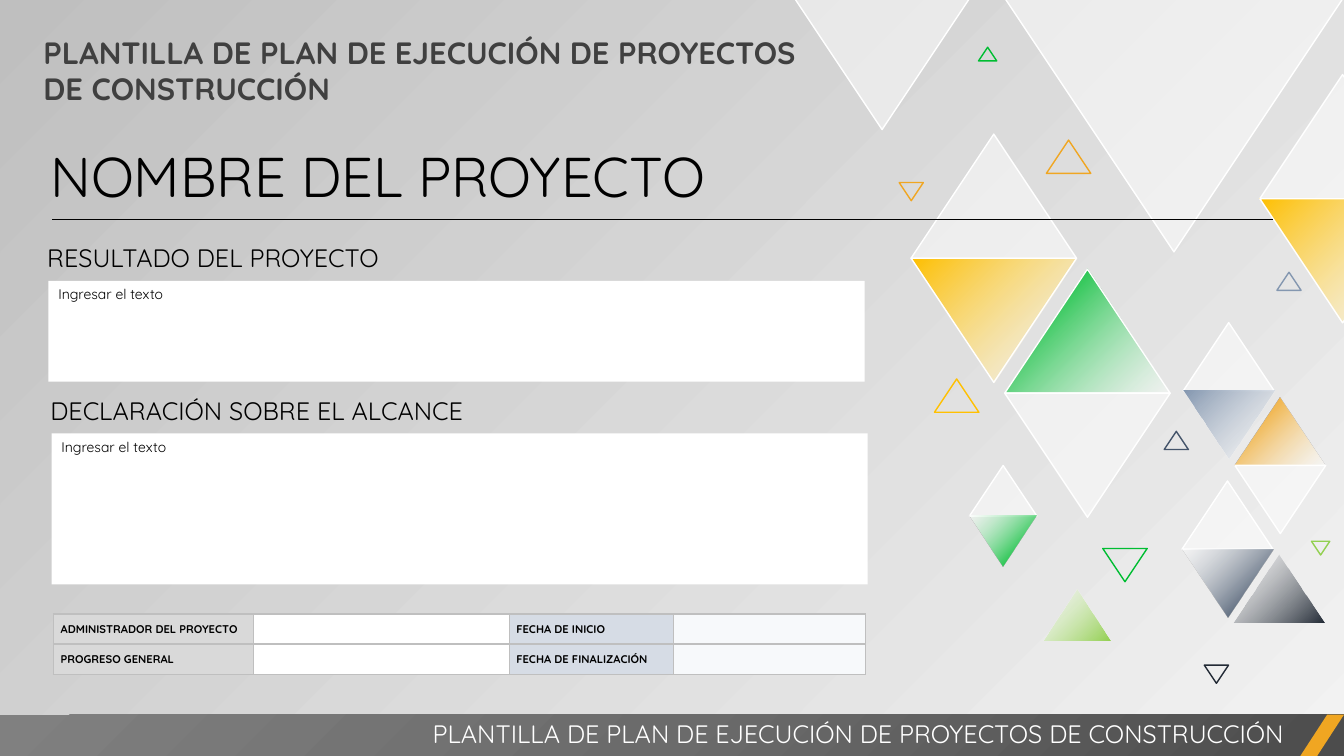
from pptx import Presentation
from pptx.dml.color import RGBColor
from pptx.enum.shapes import MSO_CONNECTOR as Connector, MSO_SHAPE as Shape
from pptx.enum.text import MSO_ANCHOR as Anchor, MSO_AUTO_SIZE as AutoSize, PP_ALIGN as Align
from pptx.oxml import parse_xml
from pptx.oxml.ns import nsdecls, qn
from pptx.util import Cm, Pt

BLACK = RGBColor(0x00, 0x00, 0x00)
WHITE = RGBColor(0xFF, 0xFF, 0xFF)
CHARCOAL = RGBColor(0x40, 0x40, 0x40)
PALE = RGBColor(0xF2, 0xF2, 0xF2)
SILVER = RGBColor(0xBF, 0xBF, 0xBF)
LABEL_GREY = RGBColor(0xD9, 0xD9, 0xD9)
LABEL_BLUE = RGBColor(0xD6, 0xDC, 0xE5)
VALUE_BLUE = RGBColor(0xF7, 0xF9, 0xFB)
BAR_DARK = RGBColor(0x4C, 0x4C, 0x4C)
BAR_MIDDLE = RGBColor(0x6B, 0x6B, 0x6B)
BAR_LIGHT = RGBColor(0x80, 0x80, 0x80)
YELLOW = RGBColor(0xFF, 0xC0, 0x00)
GREEN = RGBColor(0x00, 0xBD, 0x32)
ORANGE = RGBColor(0xF0, 0xA6, 0x22)
LIME = RGBColor(0x92, 0xD0, 0x50)
BLUE = RGBColor(0x84, 0x97, 0xB0)
SLATE = RGBColor(0x44, 0x54, 0x6A)
NAVY = RGBColor(0x22, 0x2A, 0x35)

FONT = "Quicksand"
HEADING = "PLANTILLA DE PLAN DE EJECUCIÓN DE PROYECTOS DE CONSTRUCCIÓN"
PROMPT = "Ingresar el texto"
DIAGONAL = '<a:lin ang="13500000" scaled="0"/>'
CORNER = '<a:path path="circle"><a:fillToRect l="100000" t="100000"/></a:path>'

# Gradient stops: position, colour, opacity (percent)
FADE_OUT = {color: [(0, color, 100), (100, WHITE, 50)] for color in (YELLOW, NAVY, BLUE, LIME)}
FADE_IN = {color: [(0, WHITE, 50), (82, color, 100)] for color in (GREEN, SLATE, ORANGE)}
TRIANGLE_STOPS = {**FADE_OUT, **FADE_IN, WHITE: [(0, WHITE, 50), (100, WHITE, 50)]}

# Diamonds: left, top, width, upper colour, lower colour
DIAMONDS = [
    (22.96, 3.38, 4.17, WHITE, YELLOW),
    (25.32, 6.78, 4.17, GREEN, WHITE),
    (29.79, 12.12, 2.29, WHITE, SLATE),
    (29.82, 8.13, 2.29, WHITE, BLUE),
    (31.12, 10.01, 2.29, ORANGE, WHITE),
    (24.43, 11.73, 1.7, WHITE, GREEN),
    (31.75, 1.88, 4.17, WHITE, YELLOW),
]
# Single triangles: left, top, width, colour, pointing down
SINGLES = [
    (25.32, -0.05, 8.53, WHITE, True),
    (20.02, -0.05, 4.42, WHITE, True),
    (31.09, 13.97, 2.29, NAVY, False),
    (26.29, 14.86, 1.7, LIME, False),
]
OUTLINES = [
    (27.79, 13.82, 1.12, GREEN, True),
    (23.55, 9.55, 1.12, YELLOW, False),
    (29.34, 10.87, 0.61, SLATE, False),
    (30.35, 16.76, 0.61, NAVY, True),
    (22.66, 4.6, 0.61, ORANGE, True),
    (32.18, 6.86, 0.61, BLUE, False),
    (24.66, 1.19, 0.46, GREEN, False),
    (33.05, 13.64, 0.46, LIME, True),
    (26.37, 3.53, 1.12, ORANGE, False),
]


def set_all(target, values):
    for name, value in values.items():
        setattr(target, name, value)


def lengths(box):
    return [Cm(value) for value in box]


def paint_gradient(fill, holder, stops, direction=DIAGONAL):
    fill.background()
    marks = "".join(
        f'<a:gs pos="{position * 1000}"><a:srgbClr val="{color}">'
        f'<a:alpha val="{opacity * 1000}"/></a:srgbClr></a:gs>'
        for position, color, opacity in stops)
    gradient = parse_xml(f'<a:gradFill {nsdecls("a")} rotWithShape="1">'
                         f'<a:gsLst>{marks}</a:gsLst>{direction}</a:gradFill>')
    holder.replace(holder.find(qn("a:noFill")), gradient)


def write(frame, text, size, color=BLACK, bold=False, align=Align.LEFT):
    set_all(frame, {"word_wrap": True, "auto_size": AutoSize.NONE, "vertical_anchor": Anchor.TOP})
    para = frame.paragraphs[0]
    para.alignment = align
    span = para.add_run()
    span.text = text
    set_all(span.font, {"name": FONT, "size": Pt(size), "bold": bold})
    span.font.color.rgb = color


def add_text(slide, box, text, size, **look):
    write(slide.shapes.add_textbox(*lengths(box)).text_frame, text, size, **look)


def add_plain(slide, kind, box, color=None):
    shape = slide.shapes.add_shape(kind, *lengths(box))
    shape.shadow.inherit = False
    shape.line.fill.background()
    if color is not None:
        shape.fill.solid()
        shape.fill.fore_color.rgb = color
    return shape


def add_triangle(slide, left, top, width, color, down, filled=True):
    shape = add_plain(slide, Shape.ISOSCELES_TRIANGLE, (left, top, width, width * 0.75))
    shape.rotation = 180 if down else 0
    if filled:
        paint_gradient(shape.fill, shape.element.spPr, TRIANGLE_STOPS[color])
    else:
        shape.fill.background()
    if not filled or color == WHITE or width > 4:
        shape.line.color.rgb = WHITE if filled else color
        shape.line.width = Pt(1)


def build_triangles(slide):
    for left, top, width, upper, lower in DIAMONDS:
        add_triangle(slide, left, top, width, upper, False)
        add_triangle(slide, left, top + width * 0.75, width, lower, True)
    for single in SINGLES:
        add_triangle(slide, *single)
    for outline in OUTLINES:
        add_triangle(slide, *outline, filled=False)


def build_header(slide, box):
    left, top, width, height = box
    # Template title
    title = slide.shapes.title
    place = lengths((left, top, 19.79, 2.13))
    set_all(title, dict(zip(("left", "top", "width", "height"), place)))
    write(title.text_frame, HEADING, 22, color=CHARCOAL, bold=True)
    # Project name and rule
    add_text(slide, (left + 0.18, top + 2.72, width - 0.18, 1.96), "NOMBRE DEL PROYECTO", 40)
    bottom = top + height
    rule = slide.shapes.add_connector(
        Connector.STRAIGHT, *lengths((left + 0.48, bottom, left + width - 0.1, bottom)))
    rule.line.color.rgb = BLACK
    rule.line.width = Pt(0.5)
    rule.element.spPr.append(parse_xml(f'<a:effectLst {nsdecls("a")}/>'))


def build_section(slide, box, label):
    left, top, width, height = box
    add_text(slide, (left - 0.28, top, 17, 1.02), label, 18)
    panel = add_plain(slide, Shape.RECTANGLE, (left, top + 1.09, width, height - 1.09), WHITE)
    write(panel.text_frame, PROMPT, 10)


def build_details(slide, box):
    rows = [("ADMINISTRADOR DEL PROYECTO", "", "FECHA DE INICIO", ""),
            ("PROGRESO GENERAL", "", "FECHA DE FINALIZACIÓN", "")]
    fills = (LABEL_GREY, WHITE, LABEL_BLUE, VALUE_BLUE)
    table = slide.shapes.add_table(len(rows), len(fills), *lengths(box)).table
    set_all(table, {"first_row": False, "horz_banding": False})
    for column, width in zip(table.columns, (5.03, 6.45, 4.14, 4.85)):
        column.width = Cm(width)
    for row_index, row in enumerate(rows):
        for column_index, text in enumerate(row):
            cell = table.cell(row_index, column_index)
            write(cell.text_frame, text, 8, bold=True)
            cell.text_frame.paragraphs[0].line_spacing = 1.07
            set_all(cell, {"margin_left": Cm(0.18), "margin_right": Cm(0.18), "margin_top": 0,
                           "margin_bottom": 0, "vertical_anchor": Anchor.MIDDLE})
            # Borders go before the fill
            for side in ("lnL", "lnR", "lnT", "lnB"):
                cell._tc.get_or_add_tcPr().append(parse_xml(
                    f'<a:{side} {nsdecls("a")} w="{Pt(1)}"><a:solidFill>'
                    f'<a:srgbClr val="{SILVER}"/></a:solidFill></a:{side}>'))
            cell.fill.solid()
            cell.fill.fore_color.rgb = fills[column_index]


def build_footer(slide, box):
    left, top, width, height = box
    bar = add_plain(slide, Shape.RECTANGLE, box)
    paint_gradient(bar.fill, bar.element.spPr,
                   [(0, BAR_DARK, 100), (50, BAR_MIDDLE, 100), (100, BAR_LIGHT, 100)], CORNER)
    accent = add_plain(slide, Shape.PARALLELOGRAM, (left + width - 1.1, top, 1.1, height), ORANGE)
    accent.adjustments[0] = 0.65
    add_text(slide, (left + 3.58, top - 0.03, 29.03, 1.02), HEADING, 18,
             color=WHITE, align=Align.RIGHT)


def main():
    deck = Presentation()
    set_all(deck, {"slide_width": Cm(33.87), "slide_height": Cm(19.05)})
    slide = deck.slides.add_slide(deck.slide_layouts[5])
    # Background
    backdrop = slide.background.fill
    backdrop.background()
    paint_gradient(backdrop, slide.element.find(".//" + qn("p:bgPr")),
                   [(0, PALE, 40), (100, SILVER, 100)])
    # Regions
    build_triangles(slide)
    build_header(slide, (0.84, 0.71, 31.34, 4.83))
    build_footer(slide, (0, 18.01, 33.87, 1.04))
    build_details(slide, (1.35, 15.47, 20.47, 1.52))
    build_section(slide, (1.22, 5.99, 20.57, 3.63), "RESULTADO DEL PROYECTO")
    build_section(slide, (1.3, 9.83, 20.57, 4.9), "DECLARACIÓN SOBRE EL ALCANCE")
    deck.save("out.pptx")


if __name__ == "__main__":
    main()
